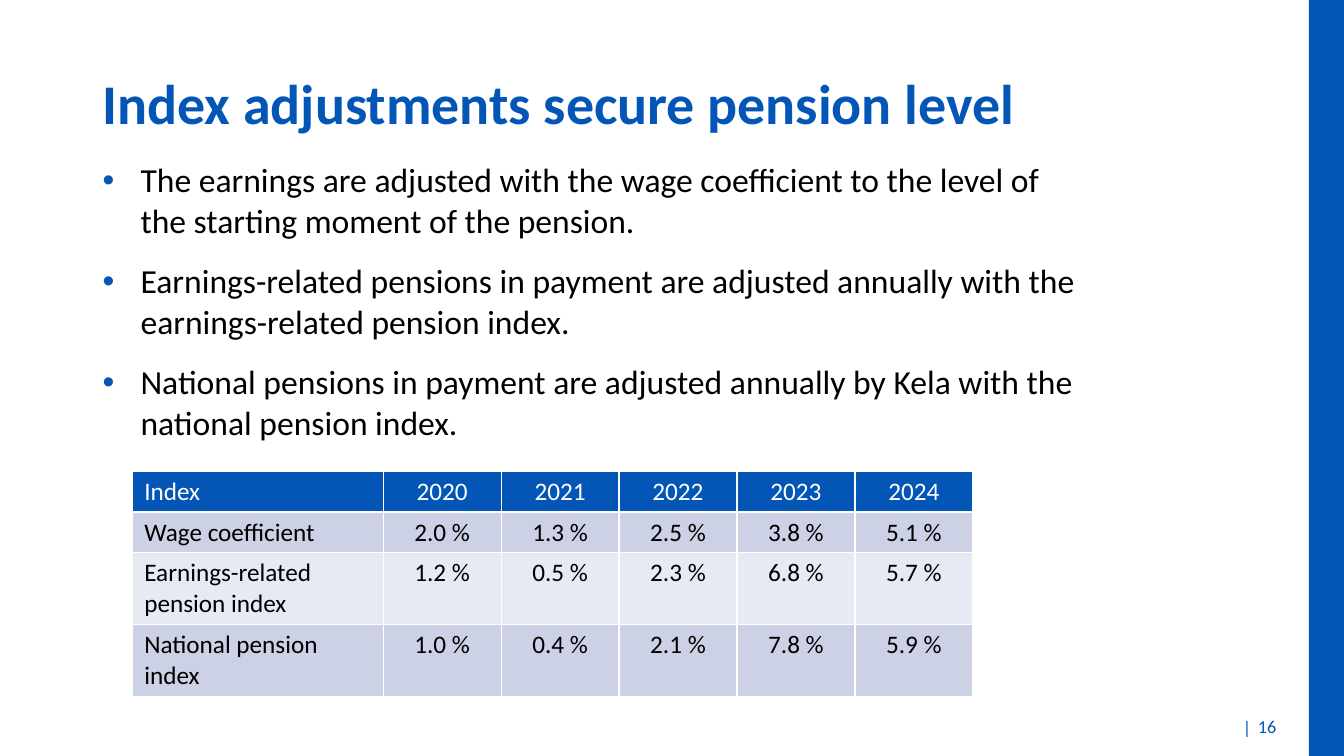
"""Build the slide on pension index adjustments."""
from dataclasses import dataclass

from lxml import etree
from pptx import Presentation, util as u
from pptx.dml.color import RGBColor
from pptx.enum import shapes, text
from pptx.oxml.ns import qn

BLUE, WHITE, BLACK = "0356B5", "FFFFFF", "000000"
BANDS = ("CCD1E5", "E7E9F3")
FONT = "Calibri"
LEFT, MID, RIGHT = text.PP_ALIGN.LEFT, text.PP_ALIGN.CENTER, text.PP_ALIGN.RIGHT


@dataclass
class Box:
    x: float
    y: float
    w: float
    h: float

    def pts(self) -> tuple:
        return tuple(u.Pt(v) for v in (self.x, self.y, self.w, self.h))


@dataclass
class Label:
    words: str
    box: Box


@dataclass
class Row:
    name: str
    vals: tuple
    high: float


TITLE = Label("Index adjustments secure pension level", Box(66.2, 45, 695.5, 67.7))
BODY = Box(66.2, 110.2, 714.2, 211)
POINTS = (
    "The earnings are adjusted with the wage coefficient to the level of the starting moment of the pension.",
    "Earnings-related pensions in payment are adjusted annually with the earnings-related pension index.",
    "National pensions in payment are adjusted annually by Kela with the national pension index.",
)
MARKS = (Label("|", Box(880.6, 508.3, 20.9, 25.2)), Label("16", Box(891.4, 507.6, 31.7, 25.2)))
GRID = Box(94.7, 336.5, 600, 158.8)
NAME_W, YEAR_W = 179, 84.25
ROWS = (
    Row("Index", ("2020", "2021", "2022", "2023", "2024"), 29.2),
    Row("Wage coefficient", ("2.0 %", "1.3 %", "2.5 %", "3.8 %", "5.1 %"), 29.2),
    Row("Earnings-related pension index", ("1.2 %", "0.5 %", "2.3 %", "6.8 %", "5.7 %"), 50.6),
    Row("National pension index", ("1.0 %", "0.4 %", "2.1 %", "7.8 %", "5.9 %"), 50.6),
)


def tint(part, code: str) -> None:
    """Set a fill or font to a solid hex colour."""
    if hasattr(part, "solid"):
        part.solid()
        part.fore_color.rgb = RGBColor.from_string(code)
    else:
        part.color.rgb = RGBColor.from_string(code)


def style(para, size: float, code: str, align=LEFT, bold: bool = False) -> None:
    """Format a whole paragraph."""
    para.alignment = align
    para.font.name, para.font.size, para.font.bold = FONT, u.Pt(size), bold
    tint(para.font, code)


def place(shape, box: Box) -> None:
    """Move and size a shape."""
    shape.left, shape.top, shape.width, shape.height = box.pts()


def bullet(para) -> None:
    """Give a paragraph a hanging blue bullet."""
    props = para._p.get_or_add_pPr()
    props.set("marL", str(u.Pt(27)))
    props.set("indent", str(u.Pt(-27)))
    shade = etree.SubElement(props, qn("a:buClr"))
    etree.SubElement(shade, qn("a:srgbClr"), val=BLUE)
    etree.SubElement(props, qn("a:buFont"), typeface="Arial")
    etree.SubElement(props, qn("a:buChar"), char="•")


def edge(cell) -> None:
    """Draw white lines round a cell."""
    props = cell._tc.get_or_add_tcPr()
    for spot, side in enumerate(("lnL", "lnR", "lnT", "lnB")):
        line = etree.Element(qn(f"a:{side}"), w=str(u.Pt(1)))
        fill = etree.SubElement(line, qn("a:solidFill"))
        etree.SubElement(fill, qn("a:srgbClr"), val=WHITE)
        props.insert(spot, line)


def add_title(slide) -> None:
    """Fill the title placeholder."""
    head = slide.shapes.title
    place(head, TITLE.box)
    frame = head.text_frame
    frame.text = TITLE.words
    frame.vertical_anchor = text.MSO_ANCHOR.TOP
    frame.auto_size = text.MSO_AUTO_SIZE.NONE
    style(frame.paragraphs[0], 40, BLUE, bold=True)


def add_points(slide) -> None:
    """Fill the body placeholder with bullets."""
    body = slide.placeholders[1]
    place(body, BODY)
    frame = body.text_frame
    frame.text = "\n".join(POINTS)
    frame.auto_size = text.MSO_AUTO_SIZE.NONE
    for rank, para in enumerate(frame.paragraphs):
        bullet(para)
        para.space_before = u.Pt(14.5 if rank else 0)
        style(para, 24, BLACK)


def add_mark(slide, mark: Label) -> None:
    """Add a small footer text."""
    frame = slide.shapes.add_textbox(*mark.box.pts()).text_frame
    frame.word_wrap = True
    frame.text = mark.words
    style(frame.paragraphs[0], 13, BLUE)


def add_grid(slide) -> None:
    """Add the table of yearly indices."""
    years = len(ROWS[0].vals)
    grid = slide.shapes.add_table(len(ROWS), years + 1, *GRID.pts()).table
    grid.first_row = grid.horz_banding = False
    for c, col in enumerate(grid.columns):
        col.width = u.Pt(YEAR_W if c else NAME_W)
    for r, row in enumerate(ROWS):
        grid.rows[r].height = u.Pt(row.high)
        for c, words in enumerate((row.name, *row.vals)):
            cell = grid.cell(r, c)
            cell.text = words
            cell.margin_left = u.Pt(5.8 if c else 8.4)
            cell.margin_right = u.Pt((22.3 if r else 5.8) if c else 7.2)
            tint(cell.fill, BANDS[(r - 1) % 2] if r else BLUE)
            edge(cell)
            align = (RIGHT if r else MID) if c else LEFT
            style(cell.text_frame.paragraphs[0], 18, BLACK if r else WHITE, align)


def main() -> None:
    """Draw and save the slide."""
    deck = Presentation()
    deck.slide_width, deck.slide_height = u.Pt(960), u.Pt(540)
    slide = deck.slides.add_slide(deck.slide_layouts[1])
    band = slide.shapes.add_shape(shapes.MSO_SHAPE.RECTANGLE, *Box(935, 0, 25, 540).pts())
    band.shadow.inherit = False
    tint(band.fill, BLUE)
    band.line.fill.background()
    add_title(slide)
    add_points(slide)
    add_grid(slide)
    for mark in MARKS:
        add_mark(slide, mark)
    deck.save("out.pptx")


if __name__ == "__main__":
    main()
